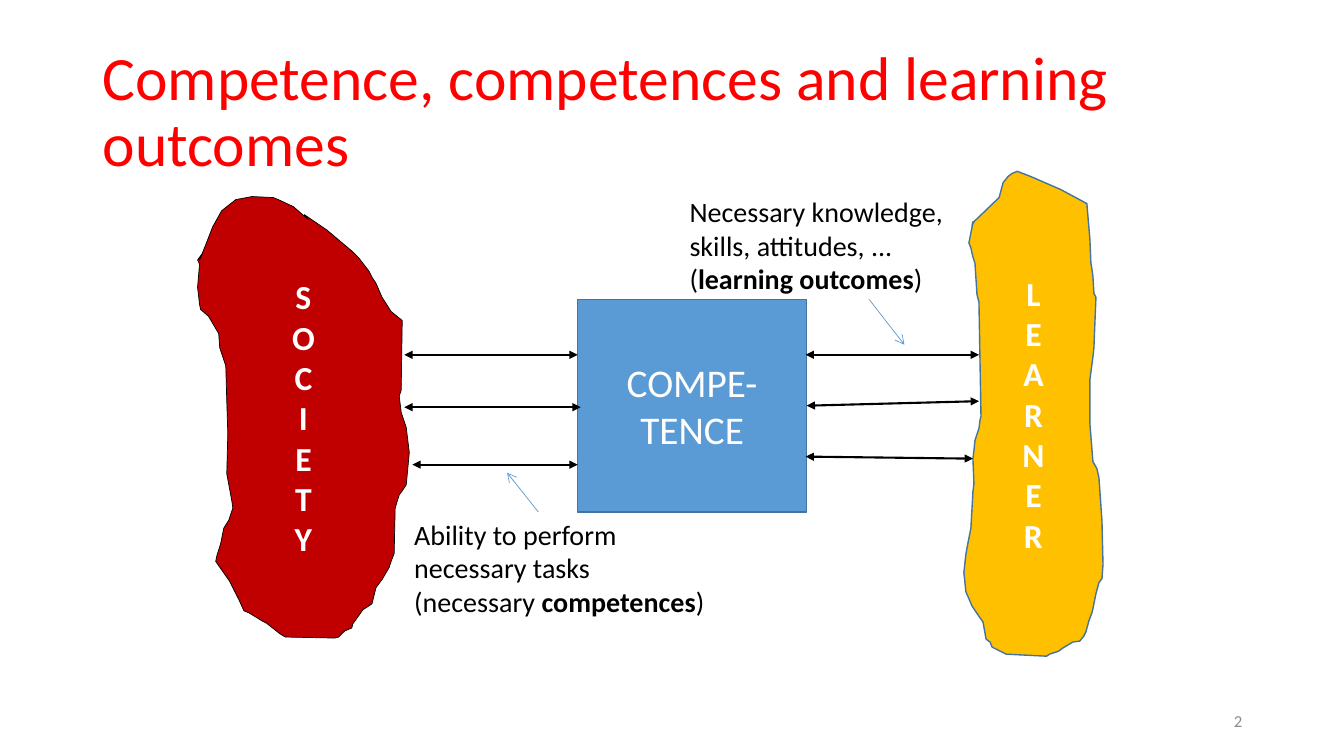
from dataclasses import dataclass
from typing import NamedTuple, Optional

from lxml import etree
from pptx import Presentation
from pptx import util as u
from pptx.dml.color import RGBColor
from pptx.enum import shapes, text
from pptx.oxml.ns import qn

PX = 9144  # 100 px to the inch


@dataclass(frozen=True)
class Theme:
    font: str = "Calibri"
    title: str = "FF0000"
    ink: str = "000000"
    light: str = "FFFFFF"
    muted: str = "8C8C8C"
    society: str = "C00000"
    learner: str = "FFC000"
    competence: str = "5B9BD5"
    outline: str = "43739E"
    title_pt: int = 44
    box_pt: int = 28
    side_pt: int = 24
    note_pt: int = 20
    number_pt: int = 12


class Run(NamedTuple):
    words: str
    bold: bool = False


class Box(NamedTuple):
    left: int
    top: int
    width: int
    height: int


Point = tuple[int, int]
Paragraphs = list[list[Run]]


@dataclass(frozen=True)
class Label:
    box: Box
    paragraphs: Paragraphs
    size: int
    color: str
    align: text.PP_ALIGN = text.PP_ALIGN.LEFT
    anchor: text.MSO_ANCHOR = text.MSO_ANCHOR.MIDDLE
    spacing: float = 1.0
    fits_text: bool = False


@dataclass(frozen=True)
class Blob:
    word: str
    fill: str
    outline: str
    weight: float
    points: list[Point]


@dataclass(frozen=True)
class Arrow:
    start: Point
    end: Point
    color: str
    weight: float
    head: Optional[str] = None
    tail: str = "triangle"
    from_competence: bool = False


THEME = Theme()
COMPETENCE = Box(573, 297, 227, 211)

SOCIETY = Blob("SOCIETY", THEME.society, THEME.ink, 0.5, [
    (198, 258), (204, 243), (211, 225), (220, 209), (234, 198), (250, 195), (271, 196),
    (276, 198), (291, 205), (306, 218), (302, 213), (324, 228), (349, 249), (356, 256),
    (366, 269), (369, 275), (373, 281), (379, 295), (388, 309), (399, 318), (398, 387),
    (396, 393), (398, 409), (403, 424), (406, 449), (403, 481), (399, 487), (396, 491),
    (392, 504), (391, 549), (388, 557), (386, 563), (379, 575), (373, 583), (370, 595),
    (369, 599), (360, 605), (350, 619), (349, 623), (342, 626), (336, 632), (332, 633),
    (283, 632), (278, 629), (264, 618), (260, 616), (247, 608), (242, 606), (237, 595),
    (228, 577), (214, 557), (215, 552), (219, 539), (222, 524), (227, 516), (231, 504),
    (230, 497), (225, 470), (226, 430), (225, 398), (224, 363), (218, 345), (217, 331),
    (207, 314), (199, 307), (198, 302), (196, 285), (198, 262), (196, 258), (201, 251)])

LEARNER = Blob("LEARNER", THEME.learner, THEME.outline, 1, [
    (964, 224), (966, 220), (991, 196), (995, 181), (1000, 175), (1004, 172), (1009, 170),
    (1022, 175), (1052, 188), (1078, 202), (1081, 237), (1082, 261), (1083, 267),
    (1084, 274), (1085, 291), (1087, 295), (1085, 345), (1084, 354), (1081, 377),
    (1081, 420), (1084, 458), (1088, 465), (1090, 474), (1093, 517), (1094, 560),
    (1093, 574), (1090, 578), (1087, 589), (1084, 604), (1083, 608), (1080, 616),
    (1077, 627), (1075, 631), (1071, 636), (1064, 637), (1054, 643), (1050, 646),
    (1041, 649), (1038, 651), (998, 649), (992, 646), (984, 642), (982, 637), (978, 634),
    (975, 617), (972, 613), (964, 601), (958, 587), (956, 568), (958, 550), (960, 539),
    (963, 524), (965, 488), (966, 480), (965, 455), (966, 447), (967, 437), (971, 425),
    (972, 417), (973, 413), (971, 300), (969, 292), (967, 261), (965, 255), (963, 246),
    (961, 241), (964, 226), (965, 220)])

TITLE = Label(Box(92, 40, 1150, 145), [[Run("Competence, competences and learning outcomes")]],
              THEME.title_pt, THEME.title, spacing=0.9)
LABELS = [
    Label(Box(401, 508, 311, 111),
          [[Run("Ability to perform")], [Run("necessary tasks")],
           [Run("(necessary "), Run("competences", True), Run(")")]],
          THEME.note_pt, THEME.ink, anchor=text.MSO_ANCHOR.TOP, fits_text=True),
    Label(Box(674, 188, 275, 111),
          [[Run("Necessary knowledge,")], [Run("skills, attitudes, ...")],
           [Run("("), Run("learning outcomes", True), Run(")")]],
          THEME.note_pt, THEME.ink, anchor=text.MSO_ANCHOR.TOP, fits_text=True),
    Label(Box(942, 695, 300, 40), [[Run("2")]], THEME.number_pt, THEME.muted,
          text.PP_ALIGN.RIGHT),
]

EXCHANGES = [
    Arrow(start, end, THEME.ink, 1.5, head="triangle", from_competence=joined)
    for start, end, joined in [
        ((401, 404), (576, 404), False), ((401, 352), (573, 352), False),
        ((409, 461), (573, 461), False), ((799, 402), (971, 398), True),
        ((799, 352), (971, 352), False), ((799, 453), (965, 455), False)]
]
POINTERS = [
    Arrow(start, end, THEME.competence, 0.5, tail="arrow")
    for start, end in [((862, 297), (897, 342)), ((534, 508), (503, 469))]
]


def rgb(color: str) -> RGBColor:
    return RGBColor.from_string(color)


def emu(box: Box) -> list[int]:
    return [length * PX for length in box]


def write(frame, paragraphs: Paragraphs, size: int, color: str,
          align: text.PP_ALIGN, spacing: float = 1.0) -> None:
    for index, runs in enumerate(paragraphs):
        paragraph = frame.add_paragraph() if index else frame.paragraphs[0]
        paragraph.alignment = align
        paragraph.line_spacing = spacing
        for words, bold in runs:
            run = paragraph.add_run()
            run.text = words
            run.font.name = THEME.font
            run.font.size = u.Pt(size)
            run.font.bold = bold
            run.font.color.rgb = rgb(color)


def paint(shape, fill: str, outline: str, weight: float) -> None:
    shape.shadow.inherit = False
    shape.fill.solid()
    shape.fill.fore_color.rgb = rgb(fill)
    shape.line.color.rgb = rgb(outline)
    shape.line.width = u.Pt(weight)


def add_label(slide, label: Label) -> None:
    frame = slide.shapes.add_textbox(*emu(label.box)).text_frame
    frame.word_wrap = not label.fits_text
    if label.fits_text:
        frame.auto_size = text.MSO_AUTO_SIZE.SHAPE_TO_FIT_TEXT
    frame.vertical_anchor = label.anchor
    write(frame, label.paragraphs, label.size, label.color, label.align, label.spacing)


def add_blob(slide, blob: Blob) -> None:
    """Draw an irregular body with its word stacked letter by letter."""
    builder = slide.shapes.build_freeform(*blob.points[0], scale=PX)
    builder.add_line_segments(blob.points[1:], close=True)
    body = builder.convert_to_shape()
    paint(body, blob.fill, blob.outline, blob.weight)
    frame = body.text_frame
    frame.vertical_anchor = text.MSO_ANCHOR.MIDDLE
    frame._element.find(qn("a:bodyPr")).set("vert", "wordArtVert")
    write(frame, [[Run(blob.word, True)]], THEME.side_pt, THEME.light, text.PP_ALIGN.CENTER)


def add_competence(slide):
    competence = slide.shapes.add_shape(shapes.MSO_SHAPE.RECTANGLE, *emu(COMPETENCE))
    paint(competence, THEME.competence, THEME.outline, 1)
    competence.text_frame.vertical_anchor = text.MSO_ANCHOR.MIDDLE
    write(competence.text_frame, [[Run("COMPE-")], [Run("TENCE")]],
          THEME.box_pt, THEME.light, text.PP_ALIGN.CENTER)
    return competence


def add_arrow(slide, arrow: Arrow, competence) -> None:
    ends = [length * PX for length in arrow.start + arrow.end]
    connector = slide.shapes.add_connector(shapes.MSO_CONNECTOR.STRAIGHT, *ends)
    if arrow.from_competence:
        connector.begin_connect(competence, 3)
    connector.line.color.rgb = rgb(arrow.color)
    connector.line.width = u.Pt(arrow.weight)
    line = connector.line._get_or_add_ln()
    for tag, kind in (("a:headEnd", arrow.head), ("a:tailEnd", arrow.tail)):
        if kind:
            etree.SubElement(line, qn(tag), type=kind)
    etree.SubElement(connector._element.spPr, qn("a:effectLst"))


def main() -> None:
    deck = Presentation()
    deck.slide_width, deck.slide_height = 1333 * PX, 750 * PX
    slide = deck.slides.add_slide(deck.slide_layouts[6])
    add_label(slide, TITLE)
    for blob in (SOCIETY, LEARNER):
        add_blob(slide, blob)
    competence = add_competence(slide)
    for arrow in EXCHANGES + POINTERS:
        add_arrow(slide, arrow, competence)
    for label in LABELS:
        add_label(slide, label)
    deck.save("out.pptx")


if __name__ == "__main__":
    main()
